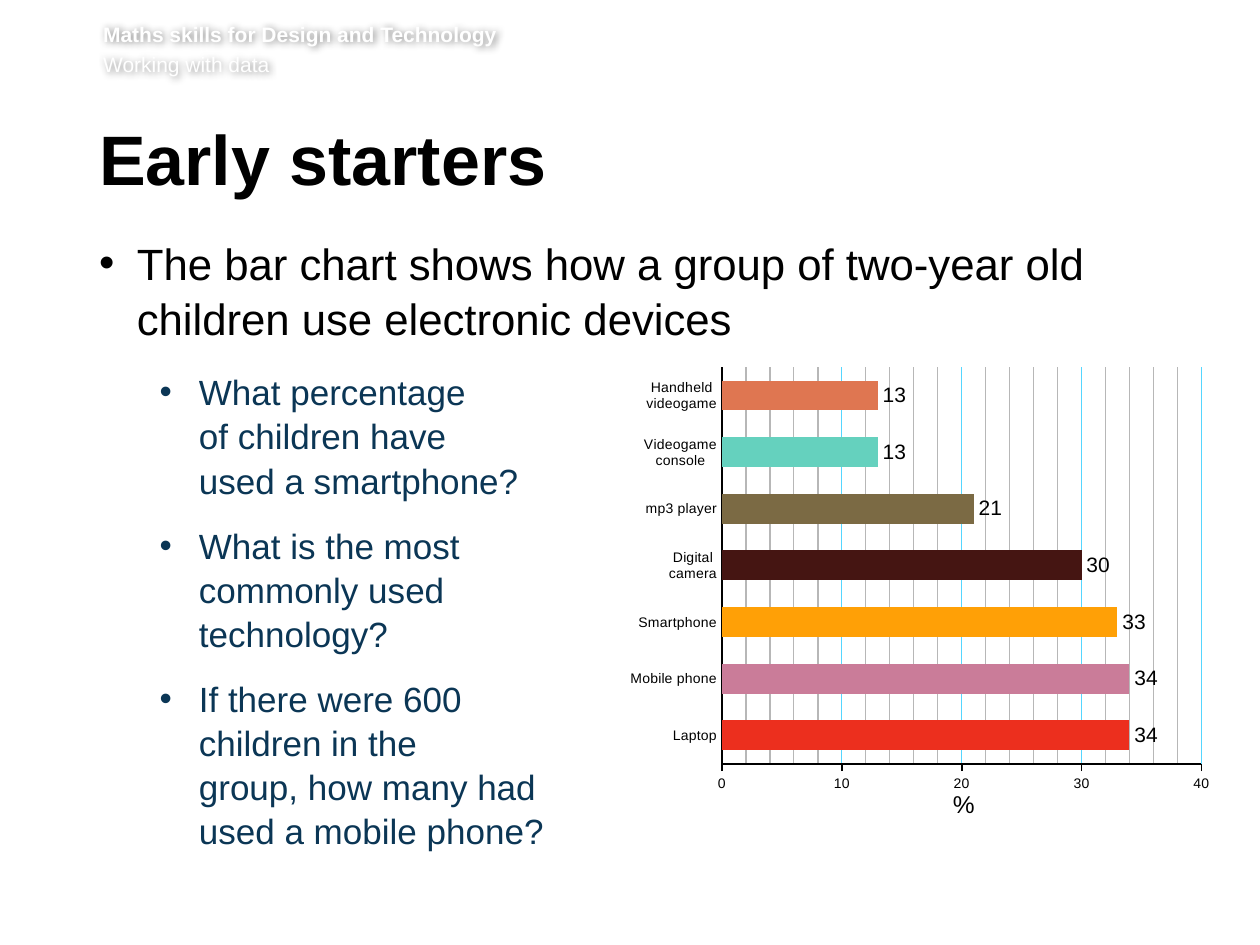
from dataclasses import dataclass

from lxml.etree import SubElement
from pptx import Presentation
from pptx.chart.data import CategoryChartData
from pptx.dml.color import RGBColor
from pptx.enum.chart import XL_CHART_TYPE, XL_LABEL_POSITION, XL_TICK_MARK
from pptx.enum.text import MSO_ANCHOR, MSO_AUTO_SIZE, PP_ALIGN
from pptx.oxml import parse_xml
from pptx.oxml.ns import nsdecls, qn
from pptx.util import Cm, Pt

FONT = "Arial"
BLACK, WHITE, NAVY, GRID = "000000", "FFFFFF", "0B3655", "55D6FF"


@dataclass
class Bullet:
    text: str
    size: int
    color: str
    left: float  # cm
    hanging: float  # cm
    after: int


@dataclass
class Device:
    name: str
    percent: int
    color: str


BULLETS = [
    Bullet("The bar chart shows how a group of two-year old children use electronic devices",
           25, BLACK, 0.76, 0.76, 14),
] + [
    Bullet(question, 20, NAVY, 2.01, 0.79, 12)
    for question in (
        "What percentage\nof children have \nused a smartphone?",
        "What is the most\ncommonly used\ntechnology?",
        "If there were 600\nchildren in the \ngroup, how many had\nused a mobile phone?",
    )
]

DEVICES = [
    Device("Laptop", 34, "EC2F1E"),
    Device("Mobile phone", 34, "CA7C99"),
    Device("Smartphone", 33, "FFA006"),
    Device("Digital camera", 30, "451512"),
    Device("mp3 player", 21, "7B6A44"),
    Device("Videogame console", 13, "65D1BE"),
    Device("Handheld videogame", 13, "DF7651"),
]


def rgb(value: str) -> RGBColor:
    return RGBColor.from_string(value)


def format_font(font, size: float, color: str = BLACK, bold: bool = False) -> None:
    font.name, font.size, font.bold = FONT, Pt(size), bold
    font.color.rgb = rgb(color)


def format_line(line, color: str, width: float) -> None:
    line.color.rgb = rgb(color)
    line.width = Pt(width)


def write(para, text: str, *, size: float, color: str = BLACK, bold: bool = False,
          before: float = 0, after: float = 0, spacing=None) -> None:
    para.text = text
    para.alignment = PP_ALIGN.LEFT
    para.space_before, para.space_after = Pt(before), Pt(after)
    if spacing is not None:
        para.line_spacing = spacing
    for span in para.runs:
        format_font(span.font, size, color, bold)


def prepare_frame(box, top: float, right: float, bottom: float):
    frame = box.text_frame
    frame.word_wrap = True
    frame.auto_size = MSO_AUTO_SIZE.NONE
    frame.vertical_anchor = MSO_ANCHOR.TOP
    frame.margin_left, frame.margin_top = 0, Cm(top)
    frame.margin_right, frame.margin_bottom = Cm(right), Cm(bottom)
    return frame


def next_paragraph(frame, index: int):
    return frame.paragraphs[0] if index == 0 else frame.add_paragraph()


def add_header(page) -> None:
    box = page.shapes.add_textbox(Cm(2.08), Cm(0.43), Cm(22.4), Cm(1.24))
    frame = prepare_frame(box, 0, 0, 0.13)
    lines = [("Maths skills for Design and Technology", True), ("Working with data", False)]
    for index, (text, bold) in enumerate(lines):
        write(next_paragraph(frame, index), text, size=12, color=WHITE, bold=bold,
              before=2.9 if index else 0)
    # Soft shadow that keeps the white text readable
    box._element.spPr.append(parse_xml(
        f'<a:effectLst {nsdecls("a")}><a:outerShdw blurRad="50800" dist="12700" dir="2700000">'
        '<a:srgbClr val="000000"><a:alpha val="45000"/></a:srgbClr>'
        '</a:outerShdw></a:effectLst>'))


def add_title(page) -> None:
    title = page.shapes.title
    title.left, title.top, title.width, title.height = Cm(2), Cm(2.51), Cm(21.72), Cm(1.85)
    frame = prepare_frame(title, 0.13, 0.25, 0.13)
    write(frame.paragraphs[0], "Early starters", size=40, bold=True, after=15, spacing=Pt(39))


def add_bullets(page) -> None:
    box = page.shapes.add_textbox(Cm(2), Cm(4.72), Cm(21.67), Cm(9.6))
    frame = prepare_frame(box, 0, 0.25, 0.13)
    for index, bullet in enumerate(BULLETS):
        para = next_paragraph(frame, index)
        write(para, bullet.text, size=bullet.size, color=bullet.color,
              after=bullet.after, spacing=1.05)
        properties = para._p.get_or_add_pPr()
        properties.set("marL", str(Cm(bullet.left)))
        properties.set("indent", str(-Cm(bullet.hanging)))
        SubElement(properties, qn("a:buFont")).set("typeface", FONT)
        SubElement(properties, qn("a:buChar")).set("char", "•")


def manual_layout(mode: str = "", **fractions: float):
    target = '<c:layoutTarget val="inner"/>' if mode == "inner" else ""
    modes = '<c:xMode val="edge"/><c:yMode val="edge"/>'
    values = "".join(f'<c:{name} val="{value}"/>' for name, value in fractions.items())
    return parse_xml(f'<c:layout {nsdecls("c")}><c:manualLayout>{target}{modes}{values}'
                     '</c:manualLayout></c:layout>')


def replace_layout(parent, layout, position: int) -> None:
    for old in parent.findall(qn("c:layout")):
        parent.remove(old)
    parent.insert(position, layout)


def add_device_chart(page) -> None:
    data = CategoryChartData()
    data.categories = [device.name for device in DEVICES]
    data.add_series("Series 1", [device.percent for device in DEVICES])
    chart = page.shapes.add_chart(XL_CHART_TYPE.BAR_CLUSTERED, Cm(12.7), Cm(7.06),
                                  Cm(11.89), Cm(9.6), data).chart
    chart.has_legend = chart.has_title = False
    format_font(chart.font, 10)

    # Bars and their values
    plot = chart.plots[0]
    plot.gap_width, plot.vary_by_categories = 89, False
    series = plot.series[0]
    series.format.fill.solid()
    series.format.fill.fore_color.rgb = rgb("5B9BD5")
    for index, device in enumerate(DEVICES):
        fill = series.points[index].format.fill
        fill.solid()
        fill.fore_color.rgb = rgb(device.color)
    labels = series.data_labels
    labels.show_value, labels.position = True, XL_LABEL_POSITION.OUTSIDE_END
    format_font(labels.font, 12)

    # Axes and gridlines
    devices, percent = chart.category_axis, chart.value_axis
    for axis, tick in ((devices, XL_TICK_MARK.NONE), (percent, XL_TICK_MARK.OUTSIDE)):
        axis.major_tick_mark, axis.minor_tick_mark = tick, XL_TICK_MARK.NONE
        format_font(axis.tick_labels.font, 8)
        format_line(axis.format.line, BLACK, 1)
    percent.minimum_scale, percent.maximum_scale = 0, 40
    percent.major_unit, percent.minor_unit = 10, 2
    percent.has_major_gridlines = percent.has_minor_gridlines = True
    format_line(percent.major_gridlines.format.line, GRID, 0.75)

    title = percent.axis_title
    para = title.text_frame.paragraphs[0]
    para.text = "%"
    format_font(para.runs[0].font, 14)

    # Fixed places for the plot and the axis title
    replace_layout(title._element, manual_layout(x=0.54, y=0.92), 1)
    replace_layout(chart._chartSpace.chart.plotArea,
                   manual_layout("inner", x=0.156, y=0.036, w=0.813, h=0.84), 0)


def main() -> None:
    deck = Presentation()
    deck.slide_width, deck.slide_height = Cm(25.4), Cm(19.05)
    page = deck.slides.add_slide(deck.slide_layouts[5])
    add_header(page)
    add_title(page)
    add_bullets(page)
    add_device_chart(page)
    deck.save("out.pptx")


if __name__ == "__main__":
    main()
